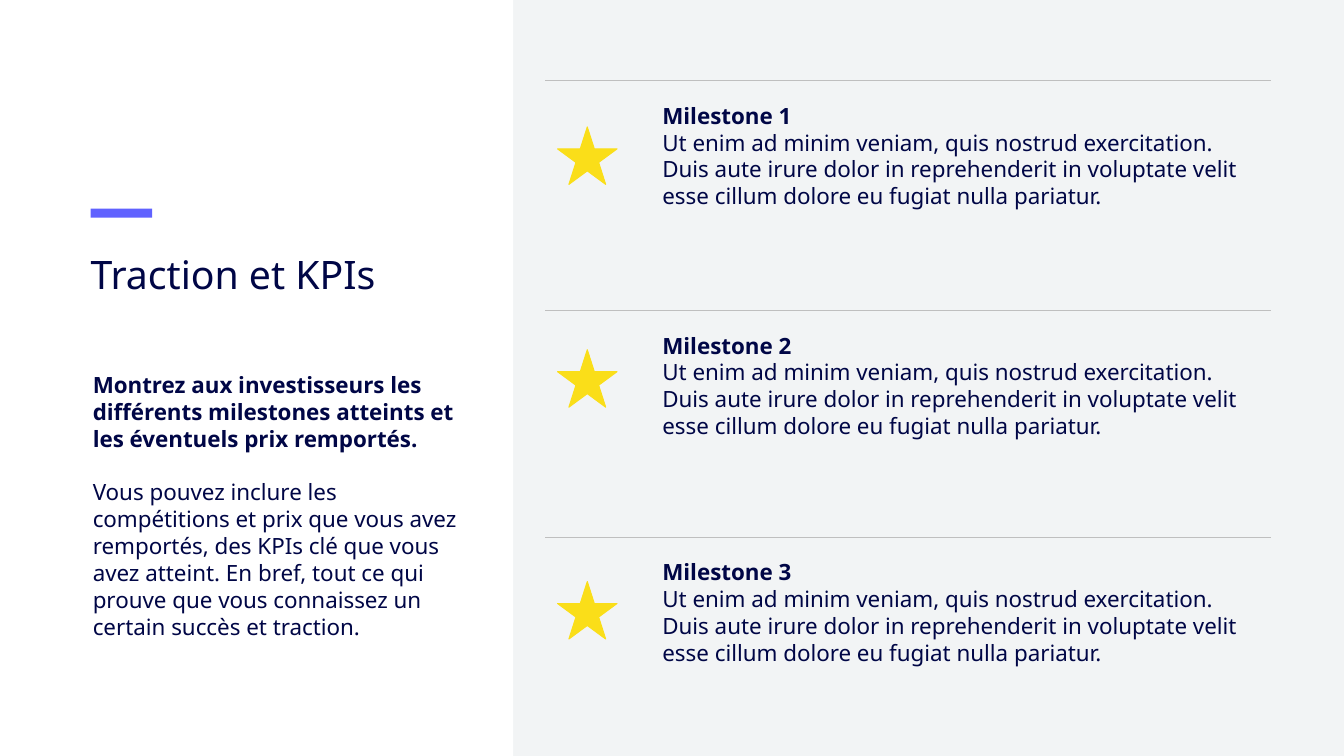
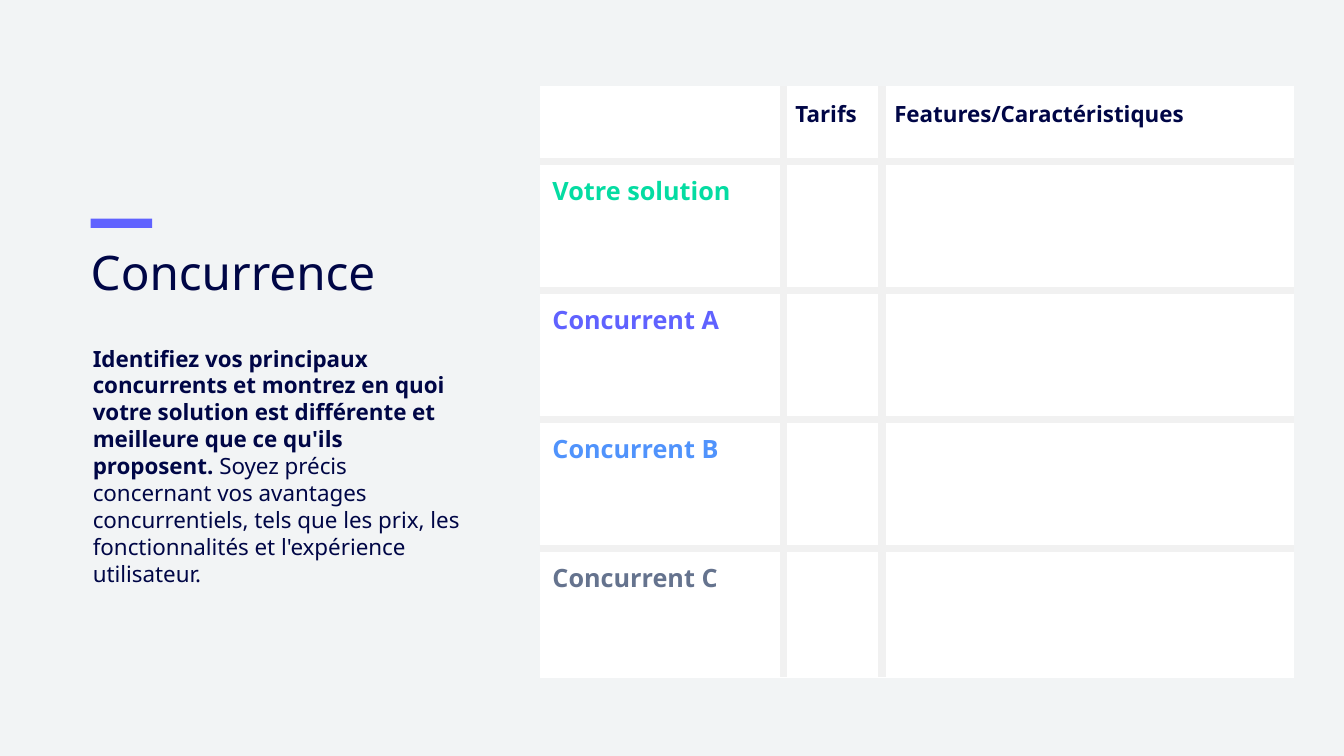
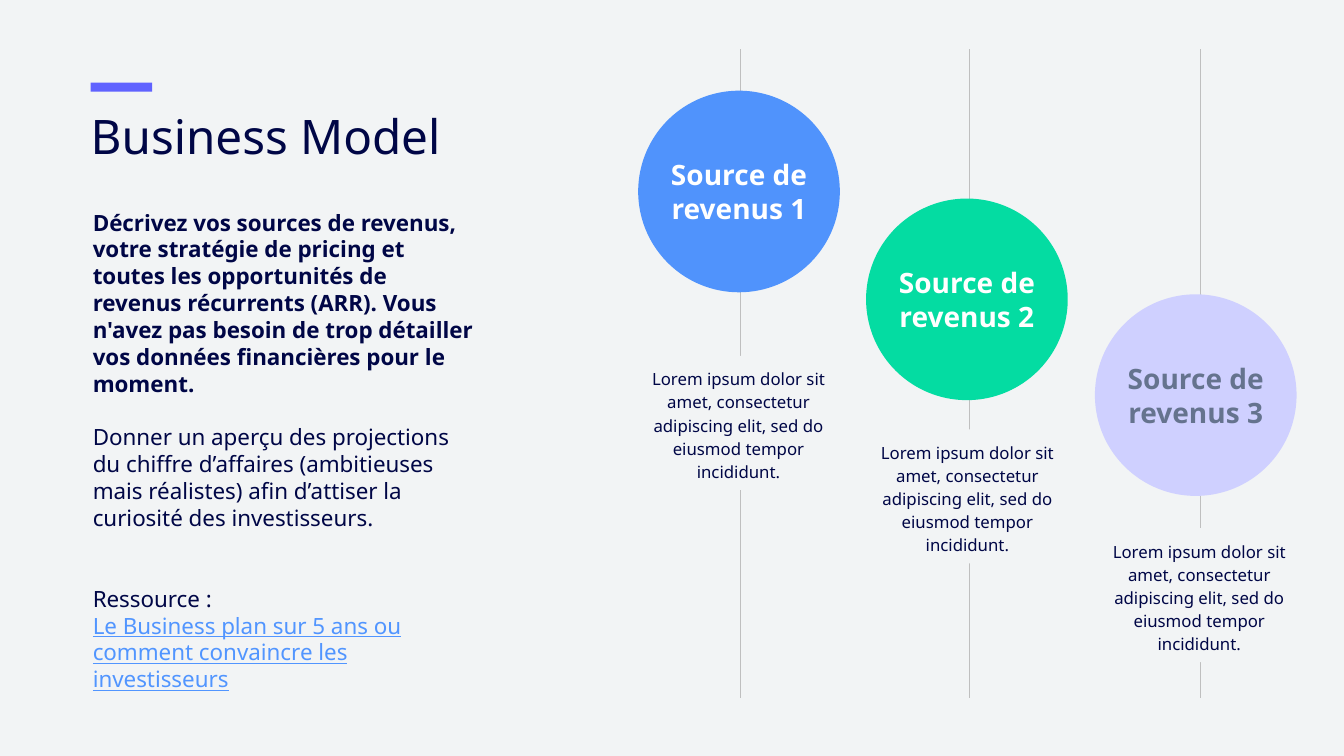
import pptx
import pptx.chart.data
import pptx.dml.color
import pptx.enum.shapes
import pptx.enum.text
import pptx.oxml
import pptx.oxml.ns
import pptx.util
from pptx.util import Inches

RGBColor = pptx.dml.color.RGBColor
Pt = pptx.util.Pt
SHAPE = pptx.enum.shapes.MSO_SHAPE
ALIGN = pptx.enum.text.PP_ALIGN
ANCHOR = pptx.enum.text.MSO_ANCHOR
AUTO_SIZE = pptx.enum.text.MSO_AUTO_SIZE

NAVY = RGBColor(0x00, 0x06, 0x46)
INDIGO = RGBColor(0x60, 0x62, 0xFF)
BLUE = RGBColor(0x50, 0x93, 0xFC)
LINK_BLUE = RGBColor(0x51, 0x95, 0xFF)
GREEN = RGBColor(0x04, 0xDC, 0xA2)
LAVENDER = RGBColor(0xCF, 0xD0, 0xFF)
SLATE = RGBColor(0x65, 0x73, 0x8E)
YELLOW = RGBColor(0xFA, 0xDE, 0x19)
WHITE = RGBColor(0xFF, 0xFF, 0xFF)
PALE = RGBColor(0xF2, 0xF4, 0xF5)
GRID = RGBColor(0xF1, 0xF1, 0xF1)
RULE = RGBColor(0xBF, 0xBF, 0xBF)

FONT = "Noto Sans"
BLANK_LINE = 19.2
NO_INSETS = dict.fromkeys(("margin_left", "margin_top", "margin_right", "margin_bottom"), 0)
PLAIN_FRAME = {**NO_INSETS, "word_wrap": True, "auto_size": AUTO_SIZE.NONE,
               "vertical_anchor": ANCHOR.TOP}
BOLD = {"bold": True}
LINK = {"color": LINK_BLUE, "underline": True}

MILESTONE_TEXT = ("Ut enim ad minim veniam, quis nostrud exercitation.",
                  "Duis aute irure dolor in reprehenderit in voluptate velit "
                  "esse cillum dolore eu fugiat nulla pariatur.")
REVENUE_TEXT = ("Lorem ipsum dolor sit amet, consectetur adipiscing elit, "
                "sed do eiusmod tempor incididunt.")


def apply(target, formats):
    """Set every format value on the target."""
    for name, value in formats.items():
        setattr(target, name, value)


def write(frame, paragraphs, size=16, **paragraph_formats):
    """Fill a text frame from (space before, runs) pairs."""
    for index, (space, runs) in enumerate(paragraphs):
        paragraph = frame.paragraphs[0] if index == 0 else frame.add_paragraph()
        apply(paragraph, {"space_before": Pt(space), **paragraph_formats})
        for words, formats in runs:
            run = paragraph.add_run()
            run.text = words
            values = {"name": FONT, "size": Pt(size), "bold": False, **formats}
            run.font.color.rgb = values.pop("color", NAVY)
            apply(run.font, values)


def place(part, left, top, width, height):
    """Move a part to a box in inches."""
    apply(part, {"left": Inches(left), "top": Inches(top),
                 "width": Inches(width), "height": Inches(height)})


def add_block(slide, kind, box, fill, outline=None):
    """Add a flat filled shape."""
    block = slide.shapes.add_shape(kind, *map(Inches, box))
    block.shadow.inherit = False
    block.fill.solid()
    block.fill.fore_color.rgb = fill
    if outline is None:
        block.line.fill.background()
    else:
        block.line.color.rgb = outline
        block.line.width = Pt(0.75)
    return block


def add_rule(slide, start, end):
    """Add a thin grey line."""
    rule = slide.shapes.add_connector(
        pptx.enum.shapes.MSO_CONNECTOR.STRAIGHT, *map(Inches, start + end))
    rule.line.color.rgb = RULE
    rule.line.width = Pt(0.75)
    properties = rule._element.spPr
    properties.append(properties.makeelement(pptx.oxml.ns.qn("a:effectLst"), {}))


def add_story(deck, title, title_box, title_size, bar_top, story, story_box):
    """Add a slide with its accent bar, title and left column."""
    slide = deck.slides.add_slide(deck.slide_layouts[1])
    heading, column = slide.shapes.title, slide.placeholders[1]
    add_block(slide, SHAPE.RECTANGLE, (0.9, bar_top, 0.61, 0.09), INDIGO)
    for part, box in ((heading, title_box), (column, story_box)):
        place(part, *box)
        apply(part.text_frame, PLAIN_FRAME)
    write(heading.text_frame, [(0, [(title, {})])], title_size, alignment=ALIGN.LEFT)
    write(column.text_frame, story)
    for paragraph in column.text_frame.paragraphs:
        properties = paragraph._p.get_or_add_pPr()
        properties.set("marL", "0")
        properties.set("indent", "0")
        properties.append(properties.makeelement(pptx.oxml.ns.qn("a:buNone"), {}))
    return slide


def add_milestone(slide, name, left, top, star_drop):
    """Add a rule, a star and the milestone text below it."""
    add_rule(slide, (left, top), (left + 7.2, top))
    add_block(slide, SHAPE.STAR_5_POINT, (left + 0.12, top + star_drop, 0.59, 0.57),
              YELLOW, YELLOW)
    details = slide.shapes.add_textbox(
        *map(Inches, (left + 1.16, top + 0.21, 5.97, 1.25)))
    apply(details.text_frame, PLAIN_FRAME)
    write(details.text_frame, [(0, [(name, BOLD)])]
          + [(0, [(sentence, {})]) for sentence in MILESTONE_TEXT])


def set_border(cell, sides):
    """Draw the four sides of a cell, thin white on the table's edge."""
    properties = cell._tc.get_or_add_tcPr()
    for index, (side, outer) in enumerate(sides.items()):
        color, width = (WHITE, 1) if outer else (GRID, 6)
        properties.insert(index, pptx.oxml.parse_xml(
            f'<a:{side} {pptx.oxml.ns.nsdecls("a")} w="{Pt(width)}">'
            f'<a:solidFill><a:srgbClr val="{color}"/></a:solidFill></a:{side}>'))


def add_comparison(slide, left, top):
    """Add the table of competitors."""
    widths, heights = (2.41, 0.98, 4.08), (0.74,) + (1.28,) * 4
    labels = {(0, 1): ("Tarifs", 16, NAVY),
              (0, 2): ("Features/Caractéristiques", 16, NAVY),
              (1, 0): ("Votre solution", 18, GREEN),
              (2, 0): ("Concurrent A", 18, INDIGO),
              (3, 0): ("Concurrent B", 18, BLUE),
              (4, 0): ("Concurrent C", 18, SLATE)}
    last_row, last_column = len(heights) - 1, len(widths) - 1
    table = slide.shapes.add_table(
        len(heights), len(widths),
        *map(Inches, (left, top, sum(widths), sum(heights)))).table
    apply(table, {"first_row": False, "horz_banding": False})
    for column, width in zip(table.columns, widths):
        column.width = Inches(width)
    for r, height in enumerate(heights):
        table.rows[r].height = Inches(height)
        for c in range(len(widths)):
            cell = table.cell(r, c)
            cell.fill.solid()
            cell.fill.fore_color.rgb = WHITE
            apply(cell, {"margin_left": Inches(0.12), "margin_top": Inches(0.12),
                         "margin_right": Inches(0.1), "margin_bottom": Inches(0.05)})
            set_border(cell, {"lnL": c == 0, "lnR": c == last_column,
                              "lnT": r == 0, "lnB": r == last_row})
            if (r, c) in labels:
                words, size, color = labels[r, c]
                write(cell.text_frame, [(0, [(words, {**BOLD, "color": color})])], size)


def add_revenue(slide, name, axis, circle_box, note_box, fill, color):
    """Add a revenue source: its axis, note and circle."""
    add_rule(slide, (axis, 6.92), (axis, 0.49))
    note = add_block(slide, SHAPE.RECTANGLE, note_box, PALE)
    apply(note.text_frame, {**PLAIN_FRAME,
                            **dict.fromkeys(NO_INSETS, Inches(0.1))})
    write(note.text_frame, [(0, [(REVENUE_TEXT, {})])], 12,
          alignment=ALIGN.CENTER, line_spacing=1.15)
    circle = add_block(slide, SHAPE.OVAL, circle_box, fill)
    apply(circle.text_frame, {**PLAIN_FRAME, "vertical_anchor": ANCHOR.MIDDLE})
    write(circle.text_frame, [(0, [(name, {**BOLD, "color": color})])], 20,
          alignment=ALIGN.CENTER)


def build_traction(deck):
    """Build the slide of milestones."""
    slide = add_story(
        deck, "Traction et KPIs", (0.9, 2.48, 3.91, 0.57), 28, 2.07,
        [(0, [("Montrez aux investisseurs les différents milestones atteints et "
               "les éventuels prix remportés.", BOLD)]),
         (BLANK_LINE, [("Vous pouvez inclure les compétitions et prix que vous avez "
                        "remportés, des KPIs clé que vous avez atteint. En bref, tout "
                        "ce qui prouve que vous connaissez un certain succès et "
                        "traction.", {})])],
        (0.92, 3.68, 3.74, 2.85))
    panel = add_block(slide, SHAPE.RECTANGLE, (0, 0, 5.09, 7.5), WHITE)
    slide.shapes.title._element.addprevious(panel._element)
    milestones = ((0.8, 0.46), (3.08, 0.39), (5.33, 0.44))
    for number, (top, star_drop) in enumerate(milestones, 1):
        add_milestone(slide, f"Milestone {number}", 5.41, top, star_drop)


def build_competition(deck):
    """Build the slide that compares competitors."""
    slide = add_story(
        deck, "Concurrence", (0.9, 2.41, 3.54, 0.57), 34, 2.17,
        [(0, [("Identifiez vos principaux concurrents et montrez en quoi votre "
               "solution est différente et meilleure que ce qu'ils proposent. ", BOLD),
              ("Soyez précis concernant vos avantages concurrentiels, tels que les "
               "prix, les fonctionnalités et l'expérience utilisateur.", {})])],
        (0.92, 3.42, 3.68, 2.97))
    add_comparison(slide, 5.36, 0.86)


def build_business_model(deck):
    """Build the slide of revenue sources."""
    slide = add_story(
        deck, "Business Model", (0.9, 1.06, 4.39, 0.57), 34, 0.82,
        [(0, [("Décrivez vos sources de revenus, votre stratégie de pricing et toutes "
               "les opportunités de revenus récurrents (ARR). Vous n'avez pas besoin "
               "de trop détailler vos données financières pour le moment.", BOLD)]),
         (BLANK_LINE, [("Donner un aperçu des projections du chiffre d’affaires "
                        "(ambitieuses mais réalistes) afin d’attiser la curiosité des "
                        "investisseurs.", {})]),
         (2 * BLANK_LINE, [("Ressource :", {})]),
         (0, [("Le Business plan sur 5 ans ou comment convaincre les investisseurs",
               LINK)])],
        (0.92, 2.07, 3.84, 5.18))
    sources = ((7.34, (6.33, 0.9), (6.25, 3.53), BLUE, WHITE),
               (9.62, (8.59, 1.97), (8.52, 4.26), GREEN, WHITE),
               (11.91, (10.86, 2.92), (10.82, 5.24), LAVENDER, SLATE))
    for number, (axis, circle, note, fill, color) in enumerate(sources, 1):
        add_revenue(slide, f"Source de revenus {number}", axis,
                    circle + (2, 2), note + (2.15, 1.33), fill, color)


def main():
    """Build and save the deck."""
    deck = pptx.Presentation()
    apply(deck, {"slide_width": Inches(13.33), "slide_height": Inches(7.5)})
    backdrop = deck.slide_master.background.fill
    backdrop.solid()
    backdrop.fore_color.rgb = PALE
    for build in (build_traction, build_competition, build_business_model):
        build(deck)
    deck.save("out.pptx")


if __name__ == "__main__":
    main()
